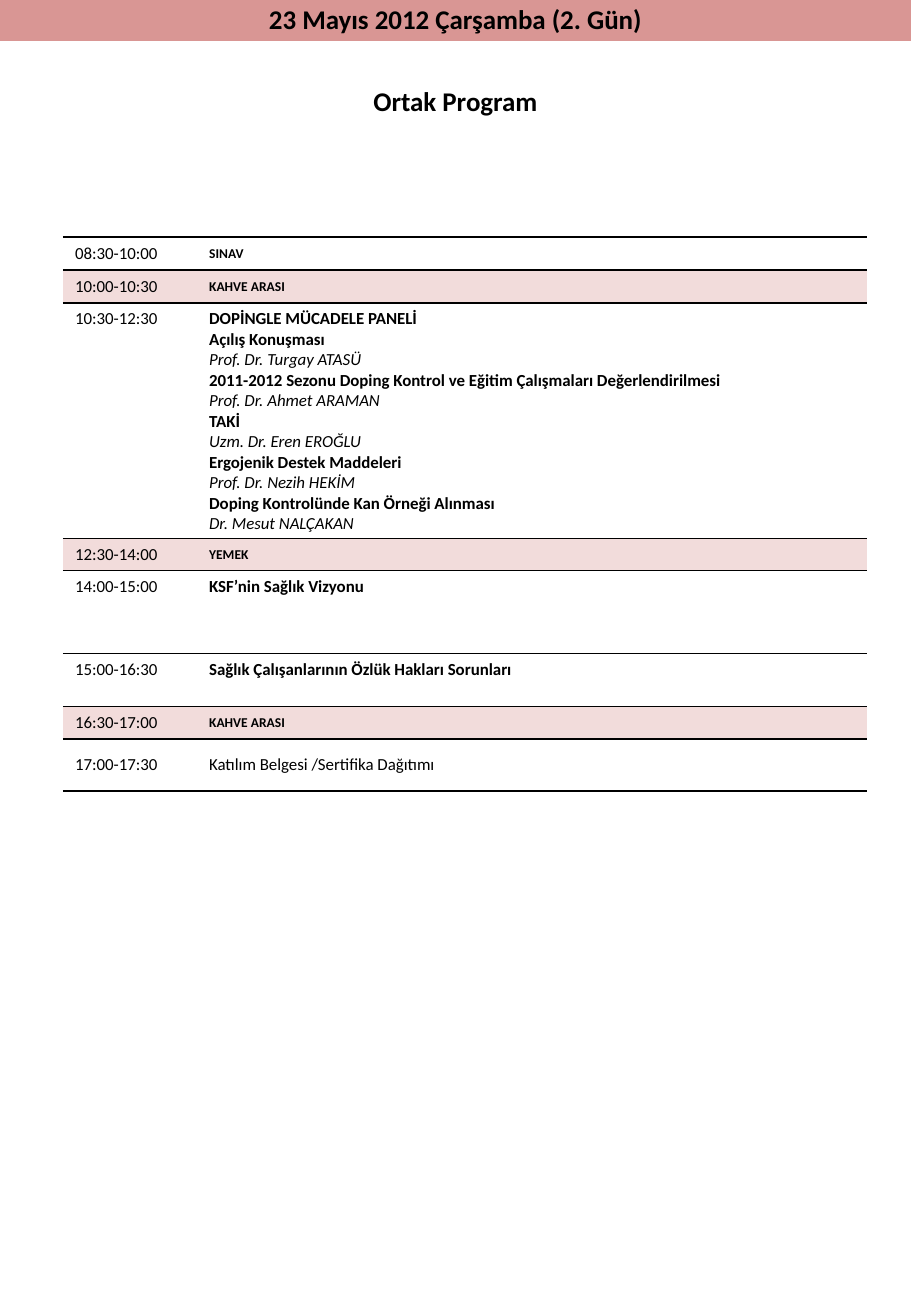
from lxml.etree import SubElement
from pptx import Presentation
from pptx.dml.color import RGBColor
from pptx.enum.text import MSO_ANCHOR, PP_ALIGN
from pptx.oxml.ns import qn
from pptx.util import Pt

# Content
DAY = "23 Mayıs 2012 Çarşamba (2. Gün)"
PROGRAM = "Ortak Program"
PANEL = [
    ("DOPİNGLE MÜCADELE PANELİ", "topic"),
    ("Açılış Konuşması", "topic"),
    ("Prof. Dr. Turgay ATASÜ", "speaker"),
    ("2011-2012 Sezonu Doping Kontrol ve Eğitim Çalışmaları Değerlendirilmesi", "topic"),
    ("Prof. Dr. Ahmet ARAMAN", "speaker"),
    ("TAKİ", "topic"),
    ("Uzm. Dr. Eren EROĞLU", "speaker"),
    ("Ergojenik Destek Maddeleri", "topic"),
    ("Prof. Dr. Nezih HEKİM", "speaker"),
    ("Doping Kontrolünde Kan Örneği Alınması", "topic"),
    ("Dr. Mesut NALÇAKAN", "speaker"),
]
# time, lines, row height in px, fill, anchor
SESSIONS = [
    ("08:30-10:00", [("SINAV", "label")], 33, "white", "middle"),
    ("10:00-10:30", [("KAHVE ARASI", "label")], 33, "break", "middle"),
    ("10:30-12:30", PANEL, 235, "white", "top"),
    ("12:30-14:00", [("YEMEK", "label")], 32, "break", "middle"),
    ("14:00-15:00", [("KSF’nin Sağlık Vizyonu", "topic")], 83, "white", "top"),
    ("15:00-16:30", [("Sağlık Çalışanlarının Özlük Hakları Sorunları", "topic")],
     53, "white", "top"),
    ("16:30-17:00", [("KAHVE ARASI", "label")], 32, "break", "middle"),
    ("17:00-17:30", [("Katılım Belgesi /Sertifika Dağıtımı", "plain")],
     52, "white", "middle"),
]

# Formats
COLORS = {"banner": "D99694", "break": "F2DCDB", "white": "FFFFFF", "text": "000000"}
STYLES = {
    "heading": {"size": Pt(16), "bold": True, "italic": False},
    "label": {"size": Pt(8), "bold": True, "italic": False},
    "topic": {"size": Pt(10), "bold": True, "italic": False},
    "speaker": {"size": Pt(10), "bold": False, "italic": True},
    "plain": {"size": Pt(10), "bold": False, "italic": False},
}
ANCHORS = {"top": MSO_ANCHOR.TOP, "middle": MSO_ANCHOR.MIDDLE}
COLUMN_WIDTHS = [134, 670]
EMU_PER_PX = 914400 / 121.5


def px(length):
    return round(length * EMU_PER_PX)


def color(name):
    return RGBColor.from_string(COLORS[name])


def write(frame, lines, align=PP_ALIGN.LEFT):
    for index, (text, style) in enumerate(lines):
        paragraph = frame.add_paragraph() if index else frame.paragraphs[0]
        paragraph.alignment = align
        run = paragraph.add_run()
        run.text = text
        for key, value in {"name": "Calibri", **STYLES[style]}.items():
            setattr(run.font, key, value)
        run.font.color.rgb = color("text")


def rule_cell(cell):
    """Black rules above and below, none at the sides."""
    properties = cell._tc.get_or_add_tcPr()
    for side in ("lnL", "lnR", "lnT", "lnB"):
        line = SubElement(properties, qn(f"a:{side}"), w=str(Pt(1)))
        if side in ("lnL", "lnR"):
            SubElement(line, qn("a:noFill"))
        else:
            fill = SubElement(line, qn("a:solidFill"))
            SubElement(fill, qn("a:srgbClr"), val=COLORS["text"])


def place(shape, left, top, width, height):
    box = {"left": left, "top": top, "width": width, "height": height}
    for key, value in box.items():
        setattr(shape, key, px(value))


def main():
    deck = Presentation()
    deck.slide_width, deck.slide_height = px(911), px(1316)
    slide = deck.slides.add_slide(deck.slide_layouts[5])

    # Day banner
    banner = slide.shapes.title
    place(banner, 0, -4, 911, 45)
    banner.fill.solid()
    banner.fill.fore_color.rgb = color("banner")
    banner.text_frame.vertical_anchor = MSO_ANCHOR.MIDDLE
    write(banner.text_frame, [(DAY, "heading")], PP_ALIGN.CENTER)

    # Program heading
    program = slide.shapes.add_textbox(px(293), px(79), px(325), px(45))
    program.text_frame.word_wrap = True
    write(program.text_frame, [(PROGRAM, "heading")], PP_ALIGN.CENTER)

    # Timetable
    total_height = sum(session[2] for session in SESSIONS)
    timetable = slide.shapes.add_table(
        len(SESSIONS), len(COLUMN_WIDTHS), px(63), px(237),
        px(sum(COLUMN_WIDTHS)), px(total_height)).table
    timetable.first_row = timetable.horz_banding = False
    for column, width in zip(timetable.columns, COLUMN_WIDTHS):
        column.width = px(width)
    for row, (time, lines, height, fill, anchor) in zip(timetable.rows, SESSIONS):
        row.height = px(height)
        for cell, content in zip(row.cells, ([(time, "plain")], lines)):
            rule_cell(cell)
            cell.fill.solid()
            cell.fill.fore_color.rgb = color(fill)
            cell.vertical_anchor = ANCHORS[anchor]
            write(cell.text_frame, content)

    deck.save("out.pptx")


if __name__ == "__main__":
    main()
